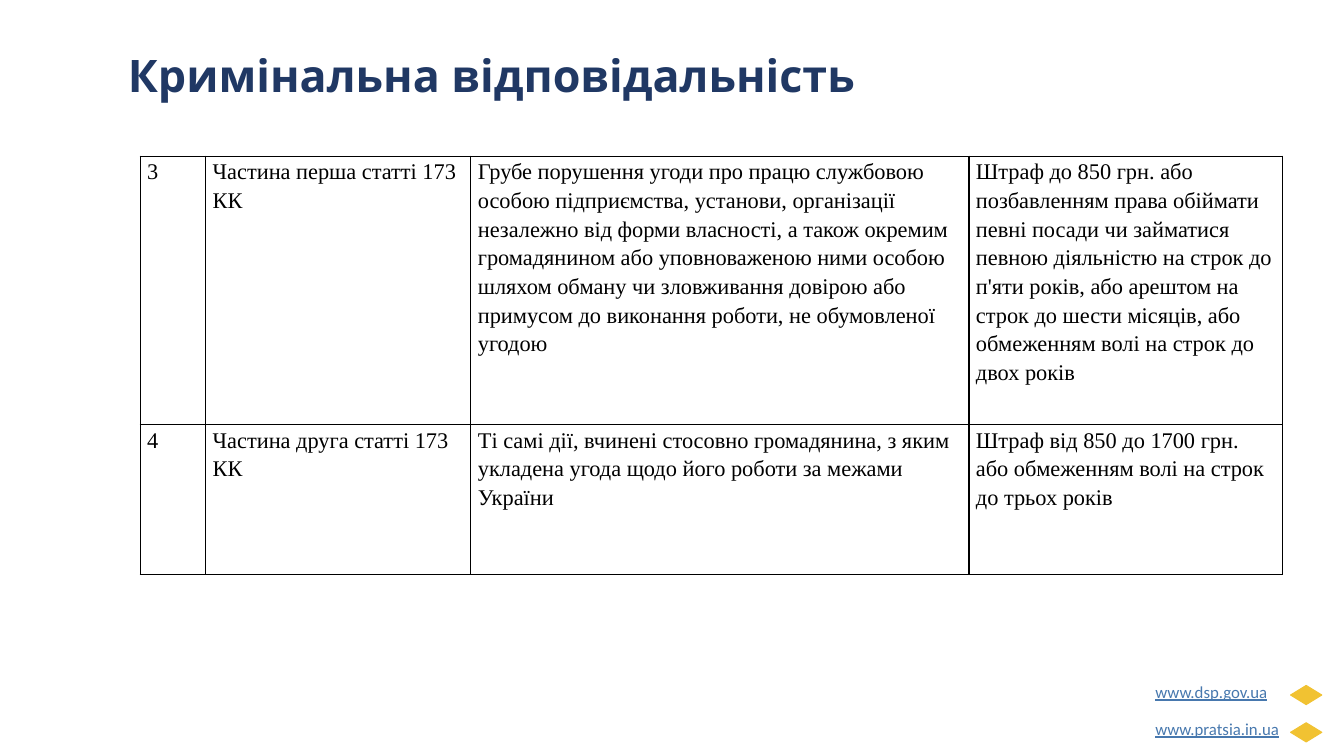
import pptx
import pptx.util
import pptx.dml.color
import pptx.enum.shapes
import pptx.enum.text
import pptx.oxml

TITLE = "Кримінальна відповідальність"
ROWS = [
    ("3", "Частина перша статті 173 КК",
     "Грубе порушення угоди про працю службовою особою підприємства, установи, "
     "організації незалежно від форми власності, а також окремим громадянином "
     "або уповноваженою ними особою шляхом обману чи зловживання довірою або "
     "примусом до виконання роботи, не обумовленої угодою",
     "Штраф до 850 грн. або позбавленням права обіймати певні посади чи "
     "займатися певною діяльністю на строк до п'яти років, або арештом на "
     "строк до шести місяців, або обмеженням волі на строк до двох років"),
    ("4", "Частина друга статті 173 КК",
     "Ті самі дії, вчинені стосовно громадянина, з яким укладена угода щодо "
     "його роботи за межами України",
     "Штраф від 850 до 1700 грн. або обмеженням волі на строк до трьох років"),
]
WIDTHS = (0.65, 2.63, 4.94, 3.11)
HEIGHTS = (2.66, 1.49)
LINKS = [("www.dsp.gov.ua", 1.55), ("www.pratsia.in.ua", 1.74)]
LINK_TOP, LINK_STEP = 6.66, 0.37
COLORS = {"title": "203864", "text": "000000", "link": "4778AE", "mark": "F1C232"}

inch, pt = pptx.util.Inches, pptx.util.Pt


def color(name):
    return pptx.dml.color.RGBColor.from_string(COLORS[name])


def style(par, face, size, tone, bold=False, under=False):
    for run in par.runs:
        font = run.font
        font.name, font.size = face, pt(size)
        font.bold, font.underline = bold, under
        font.color.rgb = color(tone)


def label(slide, box, text, pad):
    """Add a wrapped text box with side pads (x, y); return its paragraph."""
    frame = slide.shapes.add_textbox(*map(inch, box)).text_frame
    frame.word_wrap = True
    frame.auto_size = pptx.enum.text.MSO_AUTO_SIZE.SHAPE_TO_FIT_TEXT
    frame.margin_left = frame.margin_right = inch(pad[0])
    frame.margin_top = frame.margin_bottom = inch(pad[1])
    frame.text = text
    return frame.paragraphs[0]


def border(cell):
    props = cell._tc.get_or_add_tcPr()
    for at, side in enumerate(("lnL", "lnR", "lnT", "lnB")):
        props.insert(at, pptx.oxml.parse_xml(
            f'<a:{side} xmlns:a="http://schemas.openxmlformats.org/drawingml/2006/main"'
            f' w="{pt(1)}"><a:solidFill><a:srgbClr val="{COLORS["text"]}"/>'
            f'</a:solidFill></a:{side}>'))


def fill(cell, text):
    cell.fill.background()
    border(cell)
    cell.margin_left = cell.margin_right = inch(0.07)
    cell.margin_top = cell.margin_bottom = 0
    cell.text_frame.text = text
    par = cell.text_frame.paragraphs[0]
    par.line_spacing = 1.15
    style(par, "Times New Roman", 16, "text")


def footer(slide):
    kind = pptx.enum.shapes.MSO_SHAPE.FLOWCHART_DECISION
    for i, (text, width) in enumerate(LINKS):
        top = LINK_TOP + i * LINK_STEP
        mark = slide.shapes.add_shape(kind, *map(inch, (12.8, top + 0.14, 0.31, 0.19)))
        mark.shadow.inherit = False
        mark.fill.solid()
        mark.fill.fore_color.rgb = mark.line.color.rgb = color("mark")
        mark.line.width = pt(0.75)
        par = label(slide, (11.33, top, width, 0.47), text, (0.13, 0.13))
        style(par, "Calibri", 12, "link", under=True)


def grid(slide):
    box = (1.39, 1.55, sum(WIDTHS), sum(HEIGHTS))
    table = slide.shapes.add_table(len(ROWS), len(WIDTHS), *map(inch, box)).table
    table.first_row = table.horz_banding = False
    for col, width in zip(table.columns, WIDTHS):
        col.width = inch(width)
    for row, height, texts in zip(table.rows, HEIGHTS, ROWS):
        row.height = inch(height)
        for cell, text in zip(row.cells, texts):
            fill(cell, text)


def main():
    deck = pptx.Presentation()
    deck.slide_width, deck.slide_height = inch(13.33), inch(7.5)
    slide = deck.slides.add_slide(deck.slide_layouts[6])
    footer(slide)
    head = label(slide, (1.17, 0.42, 9.96, 0.64), TITLE, (0.1, 0.05))
    style(head, "Open Sans", 32, "title", bold=True)
    grid(slide)
    deck.save("out.pptx")


if __name__ == "__main__":
    main()
